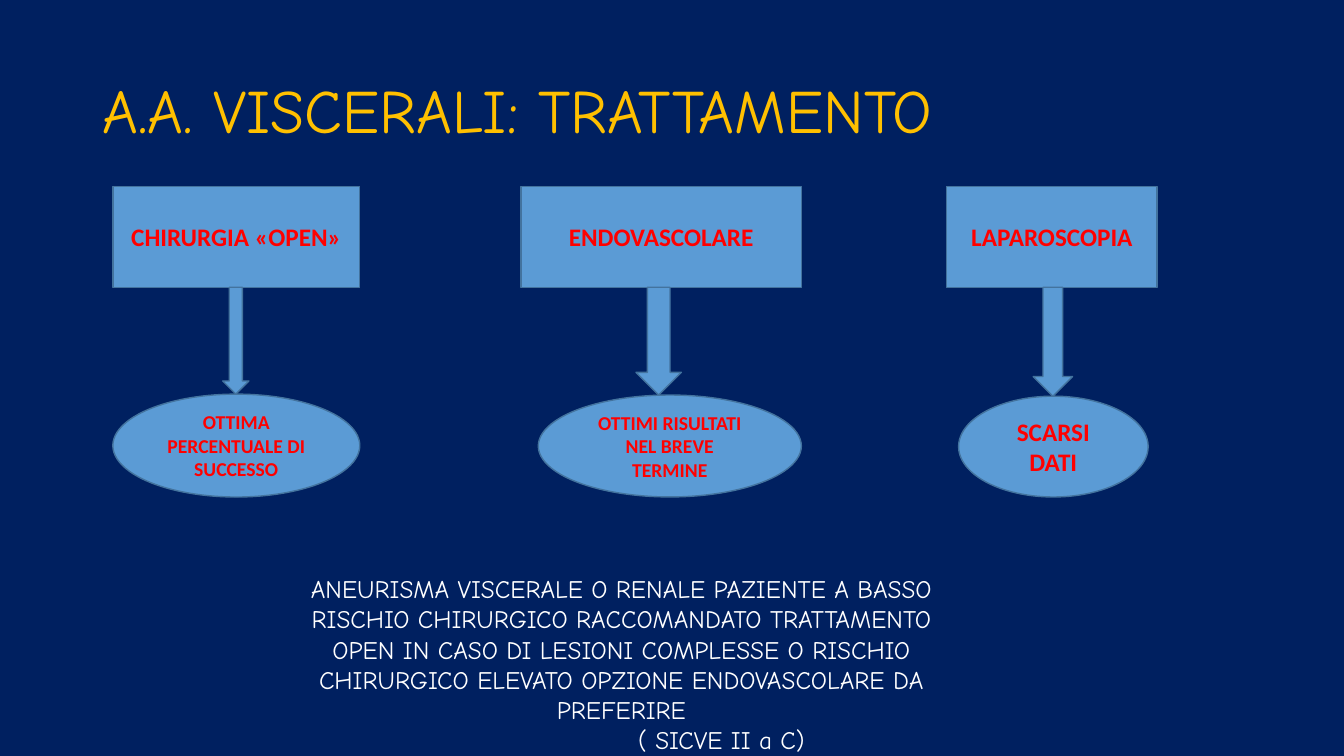
from lxml import etree
from pptx import Presentation
from pptx.dml.color import RGBColor
from pptx.enum.shapes import MSO_SHAPE
from pptx.enum.text import MSO_ANCHOR, PP_ALIGN
from pptx.util import Pt

RECTANGLE = MSO_SHAPE.RECTANGLE
ARROW = MSO_SHAPE.DOWN_ARROW
ELLIPSE = MSO_SHAPE.OVAL
MIDDLE, TOP = MSO_ANCHOR.MIDDLE, MSO_ANCHOR.TOP
LEFT, CENTER = PP_ALIGN.LEFT, PP_ALIGN.CENTER

COLORS = {
    "background": "002060",
    "title": "FFC000",
    "fill": "5B9BD5",
    "line": "43739E",
    "label": "FF0000",
    "note": "FFFFFF",
}
TITLE_FONT = {"name": "Comic Neue", "size": Pt(44)}
NOTE_FONT = {"name": "Comic Neue", "size": Pt(18)}
LABEL_FONT = {"name": "Calibri", "size": Pt(18), "bold": True}
SMALL_FONT = {**LABEL_FONT, "size": Pt(14)}

BOX_TOP, BOX_HEIGHT = 133.2, 72
ELLIPSE_BOTTOM = 355
TREATMENTS = [
    {"name": "CHIRURGIA «OPEN»", "box": (80.6, 176.4), "arrow": (159.1, 18.7),
     "result": "OTTIMA PERCENTUALE DI SUCCESSO", "ellipse": (80.6, 176.4),
     "ellipse_top": 281.5, "font": SMALL_FONT},
    {"name": "ENDOVASCOLARE", "box": (372.2, 200.2), "arrow": (454.3, 32.4),
     "result": "OTTIMI RISULTATI NEL BREVE TERMINE", "ellipse": (384.5, 187.9),
     "ellipse_top": 282.2, "font": SMALL_FONT},
    {"name": "LAPAROSCOPIA", "box": (676.1, 150.5), "arrow": (738, 28.1),
     "result": "SCARSI DATI", "ellipse": (684.7, 135.4),
     "ellipse_top": 283, "font": LABEL_FONT},
]
NOTE = ("ANEURISMA VISCERALE O RENALE PAZIENTE A BASSO RISCHIO CHIRURGICO "
        "RACCOMANDATO TRATTAMENTO OPEN IN CASO DI LESIONI COMPLESSE O RISCHIO "
        "CHIRURGICO ELEVATO OPZIONE ENDOVASCOLARE DA PREFERIRE")
CITATION = "( SICVE II a C)"
CITATION_INDENT = 143


def color(name):
    """Return the named colour."""
    return RGBColor.from_string(COLORS[name])


def write(paragraph, text, font, color_name, alignment=CENTER):
    """Put one formatted run into a paragraph."""
    paragraph.alignment = alignment
    run = paragraph.add_run()
    run.text = text
    for attribute, value in font.items():
        setattr(run.font, attribute, value)
    run.font.color.rgb = color(color_name)


def add_text_box(slide, bounds, anchor):
    """Add a wrapping text box and return its text frame."""
    frame = slide.shapes.add_textbox(*map(Pt, bounds)).text_frame
    frame.word_wrap = True
    frame.vertical_anchor = anchor
    return frame


def add_blue_shape(slide, kind, horizontal, top, bottom):
    """Add an outlined blue shape between two heights."""
    left, width = horizontal
    shape = slide.shapes.add_shape(kind, Pt(left), Pt(top), Pt(width), Pt(bottom - top))
    shape.shadow.inherit = False
    shape.fill.solid()
    shape.fill.fore_color.rgb = color("fill")
    shape.line.color.rgb = color("line")
    shape.line.width = Pt(1)
    return shape


def add_label(shape, text, font):
    """Write a centred label inside a shape."""
    frame = shape.text_frame
    frame.word_wrap = True
    frame.vertical_anchor = MIDDLE
    write(frame.paragraphs[0], text, font, "label")


def add_treatment(slide, treatment):
    """Add a treatment box, its arrow and its result."""
    box_bottom = BOX_TOP + BOX_HEIGHT
    ellipse_top = treatment["ellipse_top"]
    box = add_blue_shape(slide, RECTANGLE, treatment["box"], BOX_TOP, box_bottom)
    add_label(box, treatment["name"], LABEL_FONT)
    add_blue_shape(slide, ARROW, treatment["arrow"], box_bottom, ellipse_top)
    result = add_blue_shape(slide, ELLIPSE, treatment["ellipse"], ellipse_top, ELLIPSE_BOTTOM)
    add_label(result, treatment["result"], treatment["font"])


def add_title(slide):
    """Add the slide title."""
    paragraph = add_text_box(slide, (66.2, 28.8, 828, 104.4), MIDDLE).paragraphs[0]
    paragraph.line_spacing = 0.9
    write(paragraph, "A.A. VISCERALI: TRATTAMENTO", TITLE_FONT, "title", LEFT)


def add_note(slide):
    """Add the recommendation with its indented citation."""
    frame = add_text_box(slide, (203, 406.1, 481.7, 138.2), TOP)
    write(frame.paragraphs[0], NOTE, NOTE_FONT, "note")
    citation = frame.add_paragraph()
    write(citation, CITATION, NOTE_FONT, "note")
    properties = citation._p.get_or_add_pPr()
    properties.set("marL", str(Pt(CITATION_INDENT)))
    properties.set("indent", "0")


def main():
    """Build and save the slide."""
    presentation = Presentation()
    presentation.slide_width, presentation.slide_height = Pt(960), Pt(540)
    slide = presentation.slides.add_slide(presentation.slide_layouts[6])
    slide.background.fill.solid()
    slide.background.fill.fore_color.rgb = color("background")
    add_title(slide)
    for treatment in TREATMENTS:
        add_treatment(slide, treatment)
    add_note(slide)
    presentation.save("out.pptx")


if __name__ == "__main__":
    main()
